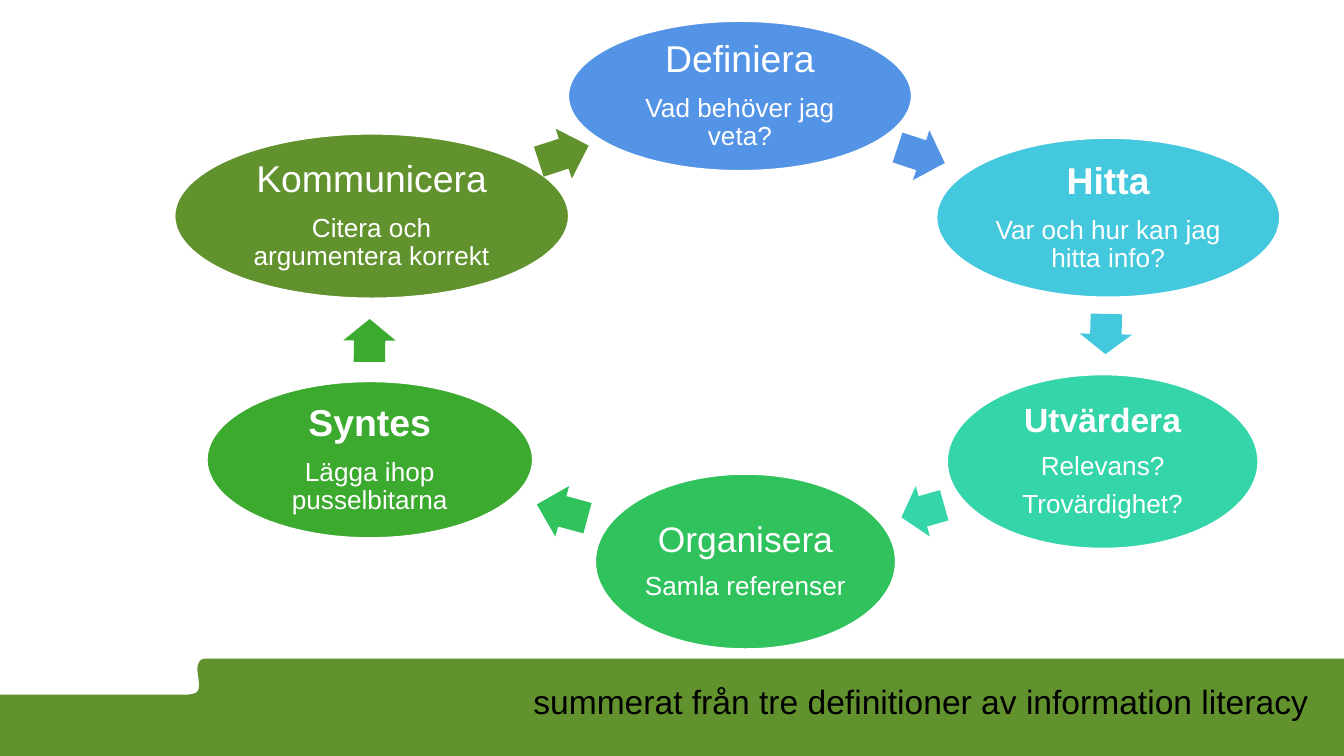
from dataclasses import dataclass

from pptx import Presentation
from pptx.dml.color import RGBColor
from pptx.enum.shapes import MSO_SHAPE
from pptx.enum.text import MSO_ANCHOR, PP_ALIGN
from pptx.shapes.autoshape import Shape
from pptx.slide import Slide
from pptx.text.text import TextFrame
from pptx.util import Cm, Pt

ELLIPSE, ARROW = MSO_SHAPE.OVAL, MSO_SHAPE.RIGHT_ARROW
CENTER, LEFT = PP_ALIGN.CENTER, PP_ALIGN.LEFT
MIDDLE = MSO_ANCHOR.MIDDLE

SLIDE_WIDTH, SLIDE_HEIGHT = 25.4, 14.29
ARROW_HEIGHT = 0.99
Point = tuple[float, float]


@dataclass(frozen=True)
class Theme:
    font: str = "Arial"
    blue: str = "5494E6"
    cyan: str = "44C8DE"
    turquoise: str = "34D5A9"
    emerald: str = "2FC25D"
    green: str = "3CA92F"
    olive: str = "62922E"
    white: str = "FFFFFF"
    black: str = "000000"
    heading: float = 20
    heading_medium: float = 19
    heading_small: float = 18
    detail: float = 14
    caption: float = 18


THEME = Theme()


@dataclass(frozen=True)
class Arrow:
    left: float
    top: float
    width: float
    angle: float


@dataclass(frozen=True)
class Step:
    heading: str
    details: list[str]
    color: str
    box: tuple[float, float, float, float]
    arrow: Arrow
    size: float = THEME.heading
    bold: bool = False


STEPS = [
    Step("Definiera", ["Vad behöver jag veta?"], THEME.blue,
         (10.72, 0.38, 6.53, 2.87), Arrow(16.94, 2.44, 0.94, 18.2)),
    Step("Hitta", ["Var och hur kan jag hitta info?"], THEME.cyan,
         (17.68, 2.59, 6.53, 3.05), Arrow(20.52, 5.82, 0.76, 91.4), bold=True),
    Step("Utvärdera", ["Relevans?", "Trovärdighet?"], THEME.turquoise,
         (17.88, 7.06, 5.92, 3.33), Arrow(17.02, 9.17, 0.84, 164.3),
         size=THEME.heading_small, bold=True),
    Step("Organisera", ["Samla referenser"], THEME.emerald,
         (11.23, 8.94, 5.72, 3.35), Arrow(10.13, 9.17, 0.99, 195.2),
         size=THEME.heading_medium),
    Step("Syntes", ["Lägga ihop pusselbitarna"], THEME.green,
         (3.89, 7.19, 6.2, 3.0), Arrow(6.58, 5.94, 0.81, 270.3), bold=True),
    Step("Kommunicera", ["Citera och argumentera korrekt"], THEME.olive,
         (3.28, 2.51, 7.49, 3.15), Arrow(10.16, 2.41, 0.99, 342)),
]


def write(frame: TextFrame, text: str, *, size: float, color: str,
          bold: bool = False, align: PP_ALIGN = LEFT,
          line_spacing: float = 1.0, space_after: float = 0) -> None:
    """Add a paragraph, using the first one while it is still empty."""
    first = frame.paragraphs[0]
    paragraph = frame.add_paragraph() if first.runs else first
    paragraph.alignment = align
    paragraph.line_spacing = line_spacing
    paragraph.space_after = Pt(space_after)
    run = paragraph.add_run()
    run.text = text
    run.font.name = THEME.font
    run.font.size = Pt(size)
    run.font.bold = bold
    run.font.color.rgb = RGBColor.from_string(color)


def paint(shape: Shape, color: str) -> None:
    shape.shadow.inherit = False
    shape.fill.solid()
    shape.fill.fore_color.rgb = RGBColor.from_string(color)
    shape.line.fill.background()


def curve(start: Point, pull: Point, push: Point, end: Point) -> list[Point]:
    """Sample a cubic Bézier curve, leaving out its start."""
    count = 8
    points = []
    for i in range(1, count + 1):
        t = i / count
        weights = ((1 - t) ** 3, 3 * t * (1 - t) ** 2, 3 * t ** 2 * (1 - t), t ** 3)
        x, y = (sum(w * c for w, c in zip(weights, axis))
                for axis in zip(start, pull, push, end))
        points.append((x, y))
    return points


def draw_footer_band(slide: Slide) -> None:
    high, low = 12.45, 13.13
    step_foot, step_side = (3.56, low), (3.76, 12.95)
    step_neck, step_head = (3.73, 12.62), (3.91, high)
    outline = [
        (SLIDE_WIDTH, high), (SLIDE_WIDTH, SLIDE_HEIGHT), (0, SLIDE_HEIGHT),
        (0, low), step_foot,
        *curve(step_foot, (3.73, 13.11), (3.76, 13.08), step_side),
        *curve(step_side, (3.76, 12.8), (3.73, 12.73), step_neck),
        *curve(step_neck, (3.76, 12.5), (3.78, high), step_head),
    ]
    builder = slide.shapes.build_freeform(Cm(step_head[0]), Cm(step_head[1]))
    builder.add_line_segments([(Cm(x), Cm(y)) for x, y in outline], close=True)
    paint(builder.convert_to_shape(), THEME.olive)


def draw_step(slide: Slide, step: Step) -> None:
    """Draw the ellipse of a step and the arrow to the next one."""
    ellipse = slide.shapes.add_shape(ELLIPSE, *map(Cm, step.box))
    paint(ellipse, step.color)
    ellipse.line.color.rgb = RGBColor.from_string(THEME.white)
    ellipse.line.width = Pt(2)

    frame = ellipse.text_frame
    frame.word_wrap = True
    frame.vertical_anchor = MIDDLE
    frame.margin_left = frame.margin_right = Cm(0.07)
    frame.margin_top = frame.margin_bottom = Cm(0.07)
    lines = [(step.heading, step.size, step.bold)]
    lines += [(detail, THEME.detail, False) for detail in step.details]
    for text, size, bold in lines:
        write(frame, text, size=size, bold=bold, color=THEME.white,
              align=CENTER, line_spacing=0.9, space_after=round(size * 0.38, 1))

    place = step.arrow
    arrow = slide.shapes.add_shape(ARROW, Cm(place.left), Cm(place.top),
                                   Cm(place.width), Cm(ARROW_HEIGHT))
    arrow.adjustments[0], arrow.adjustments[1] = 0.6, 0.5
    arrow.rotation = place.angle
    paint(arrow, step.color)


def draw_caption(slide: Slide) -> None:
    caption = slide.shapes.add_textbox(Cm(9.83), Cm(12.75), Cm(15.57), Cm(1.02))
    caption.text_frame.word_wrap = False
    write(caption.text_frame, "summerat från tre definitioner av information literacy",
          size=THEME.caption, color=THEME.black)


def main() -> None:
    presentation = Presentation()
    presentation.slide_width = Cm(SLIDE_WIDTH)
    presentation.slide_height = Cm(SLIDE_HEIGHT)
    slide = presentation.slides.add_slide(presentation.slide_layouts[6])
    draw_footer_band(slide)
    for step in STEPS:
        draw_step(slide, step)
    draw_caption(slide)
    presentation.save("out.pptx")


if __name__ == "__main__":
    main()
